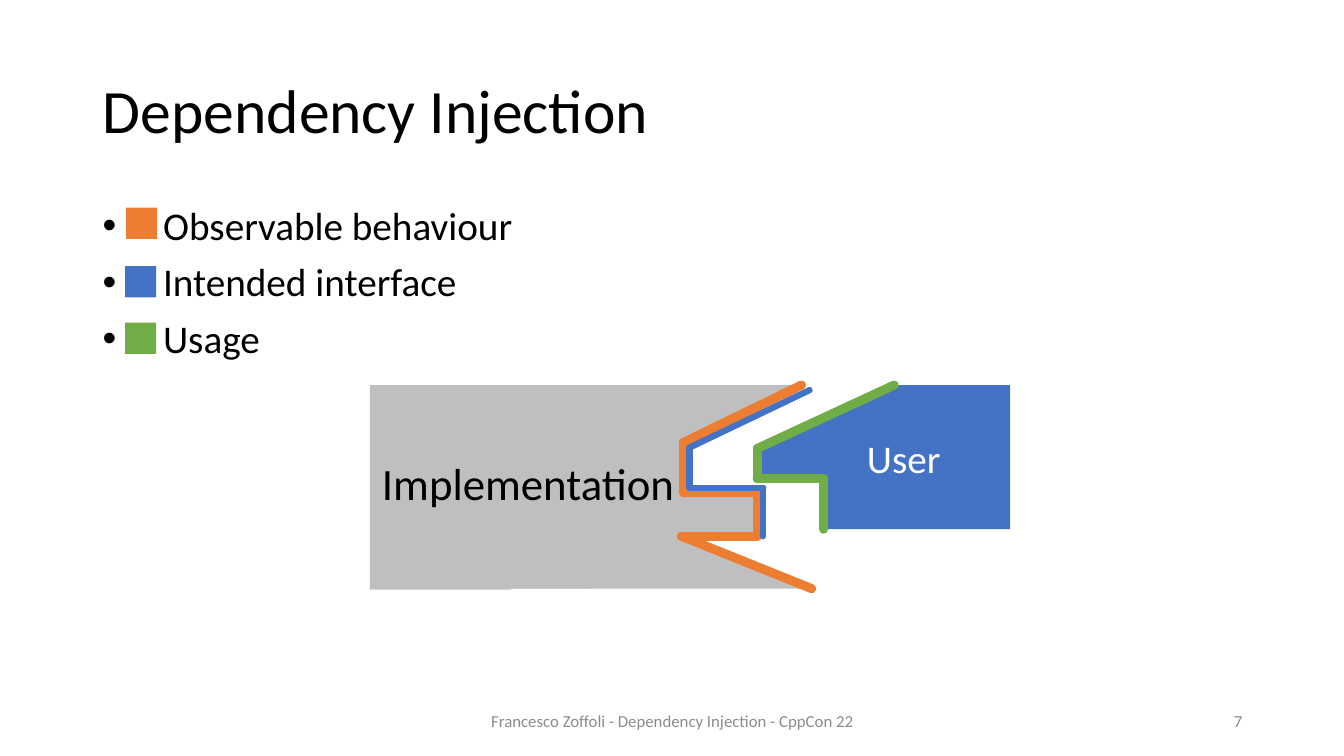
from lxml import etree
from pptx import Presentation
from pptx.dml.color import RGBColor
from pptx.enum.shapes import MSO_CONNECTOR, MSO_SHAPE
from pptx.enum.text import MSO_ANCHOR, MSO_AUTO_SIZE, PP_ALIGN
from pptx.oxml.ns import qn
from pptx.util import Inches, Pt

STRAIGHT = MSO_CONNECTOR.STRAIGHT
RECTANGLE = MSO_SHAPE.RECTANGLE
TOP, MIDDLE = MSO_ANCHOR.TOP, MSO_ANCHOR.MIDDLE
LEFT, CENTER, RIGHT = PP_ALIGN.LEFT, PP_ALIGN.CENTER, PP_ALIGN.RIGHT

BLACK = RGBColor(0x00, 0x00, 0x00)
WHITE = RGBColor(0xFF, 0xFF, 0xFF)
GRAY = RGBColor(0xBF, 0xBF, 0xBF)
FOOTER_GRAY = RGBColor(0x8C, 0x8C, 0x8C)
ORANGE = RGBColor(0xED, 0x7D, 0x31)
BLUE = RGBColor(0x44, 0x72, 0xC4)
GREEN = RGBColor(0x70, 0xAD, 0x47)
FONT = "Calibri"

LEGEND = [
    ("Observable behaviour", ORANGE, 0.33, 0.06),
    ("Intended interface", BLUE, 0.32, 0.64),
    ("Usage", GREEN, 0.32, 1.2),
]

# Edges in inches from the top left corner of the diagram
BEHAVIOUR_EDGE = [(4.28, 0), (3.11, 0.57), (3.11, 1.07), (3.84, 1.07),
                  (3.84, 1.5), (3.09, 1.5), (4.38, 2.02)]
INTERFACE_EDGE = [(4.36, 0.05), (3.17, 0.62), (3.17, 1.02), (3.9, 1.02), (3.9, 1.5)]
USAGE_EDGE = [(5.2, 0), (3.84, 0.63), (3.84, 0.93), (4.5, 0.93), (4.5, 1.43)]


def format_paragraph(paragraph, size, color, alignment=LEFT):
    paragraph.alignment = alignment
    paragraph.font.name = FONT
    paragraph.font.size = Pt(size)
    paragraph.font.color.rgb = color


def add_text(slide, text, box, size, color, alignment=LEFT, anchor=TOP):
    text_frame = slide.shapes.add_textbox(*map(Inches, box)).text_frame
    text_frame.word_wrap = True
    text_frame.vertical_anchor = anchor
    text_frame.text = text
    for paragraph in text_frame.paragraphs:
        format_paragraph(paragraph, size, color, alignment)
    return text_frame


def paint(shape, color):
    shape.shadow.inherit = False
    shape.fill.solid()
    shape.fill.fore_color.rgb = color
    shape.line.fill.background()


def add_rectangle(shapes, box, color):
    paint(shapes.add_shape(RECTANGLE, *map(Inches, box)), color)


def add_polygon(shapes, left, top, points, color):
    corners = [(Inches(left + x), Inches(top + y)) for x, y in points]
    builder = shapes.build_freeform(*corners[0])
    builder.add_line_segments(corners[1:], close=True)
    paint(builder.convert_to_shape(), color)


def add_edge(slide, left, top, points, color, width):
    """Draw a group of round-capped lines that run through the points."""
    group = slide.shapes.add_group_shape()
    for (x1, y1), (x2, y2) in zip(points, points[1:]):
        line = group.shapes.add_connector(
            STRAIGHT, Inches(left + x1), Inches(top + y1),
            Inches(left + x2), Inches(top + y2))
        line.line.color.rgb = color
        line.line.width = Pt(width)
        properties = line.line._get_or_add_ln()
        properties.set("cap", "rnd")
        etree.SubElement(properties, qn("a:round"))
        etree.SubElement(line._element.spPr, qn("a:effectLst"))


def add_title(slide, text, box):
    title = slide.shapes.title
    title.left, title.top, title.width, title.height = map(Inches, box)
    text_frame = title.text_frame
    text_frame.text = text
    text_frame.auto_size = MSO_AUTO_SIZE.NONE
    text_frame.vertical_anchor = MIDDLE
    paragraph = text_frame.paragraphs[0]
    format_paragraph(paragraph, 44, BLACK)
    paragraph.line_spacing = 0.9


def add_legend(slide, left, top, width, height):
    text = "\n".join(label for label, *_ in LEGEND)
    text_frame = add_text(slide, text, (left, top, width, height), 28, BLACK)
    for index, paragraph in enumerate(text_frame.paragraphs):
        paragraph.line_spacing = 0.9
        paragraph.space_before = Pt(10 if index else 0)
        properties = paragraph._p.get_or_add_pPr()
        properties.set("marL", str(Inches(0.6)))
        properties.set("indent", str(-Inches(0.6)))
        bullet_font = etree.Element(qn("a:buFont"), typeface="Arial")
        bullet = etree.Element(qn("a:buChar"), char="•")
        default_run = properties.find(qn("a:defRPr"))
        default_run.addprevious(bullet_font)
        default_run.addprevious(bullet)
    for _, color, x, y in LEGEND:
        add_rectangle(slide.shapes, (left + x, top + y, 0.31, 0.31), color)


def add_diagram(slide, left, top):
    add_rectangle(slide.shapes, (left, top, 1.4, 2.03), GRAY)
    implementation = slide.shapes.add_group_shape().shapes
    add_rectangle(implementation, (left + 1.06, top, 1.13, 2.02), GRAY)
    add_polygon(implementation, left, top,
                [(1.46, 0), *BEHAVIOUR_EDGE, (1.4, 2.02)], GRAY)
    add_polygon(slide.shapes, left, top,
                [*USAGE_EDGE, (6.35, 1.43), (6.35, 0)], BLUE)
    add_edge(slide, left, top, BEHAVIOUR_EDGE, ORANGE, 6.5)
    add_edge(slide, left, top, USAGE_EDGE, GREEN, 6.5)
    add_edge(slide, left, top, INTERFACE_EDGE, BLUE, 4.5)
    add_text(slide, "Implementation", (left + 0.02, top + 0.65, 3.16, 0.64), 32, BLACK)
    add_text(slide, "User", (left + 4.83, top + 0.44, 1.34, 0.57), 28, WHITE)


def add_footer(slide, left, top, width, height):
    add_text(slide, "Francesco Zoffoli - Dependency Injection - CppCon 22",
             (left + 3.5, top, 4.5, height), 12, FOOTER_GRAY, CENTER, MIDDLE)
    add_text(slide, "7", (left + width - 3, top, 3, height),
             12, FOOTER_GRAY, RIGHT, MIDDLE)


def main():
    presentation = Presentation()
    presentation.slide_width = Inches(13.33)
    presentation.slide_height = Inches(7.5)
    slide = presentation.slides.add_slide(presentation.slide_layouts[5])
    add_title(slide, "Dependency Injection", (0.92, 0.4, 11.5, 1.45))
    add_legend(slide, 0.92, 2, 11.5, 4.76)
    add_diagram(slide, 3.67, 3.82)
    add_footer(slide, 0.92, 6.95, 11.5, 0.4)
    presentation.save("out.pptx")


if __name__ == "__main__":
    main()
